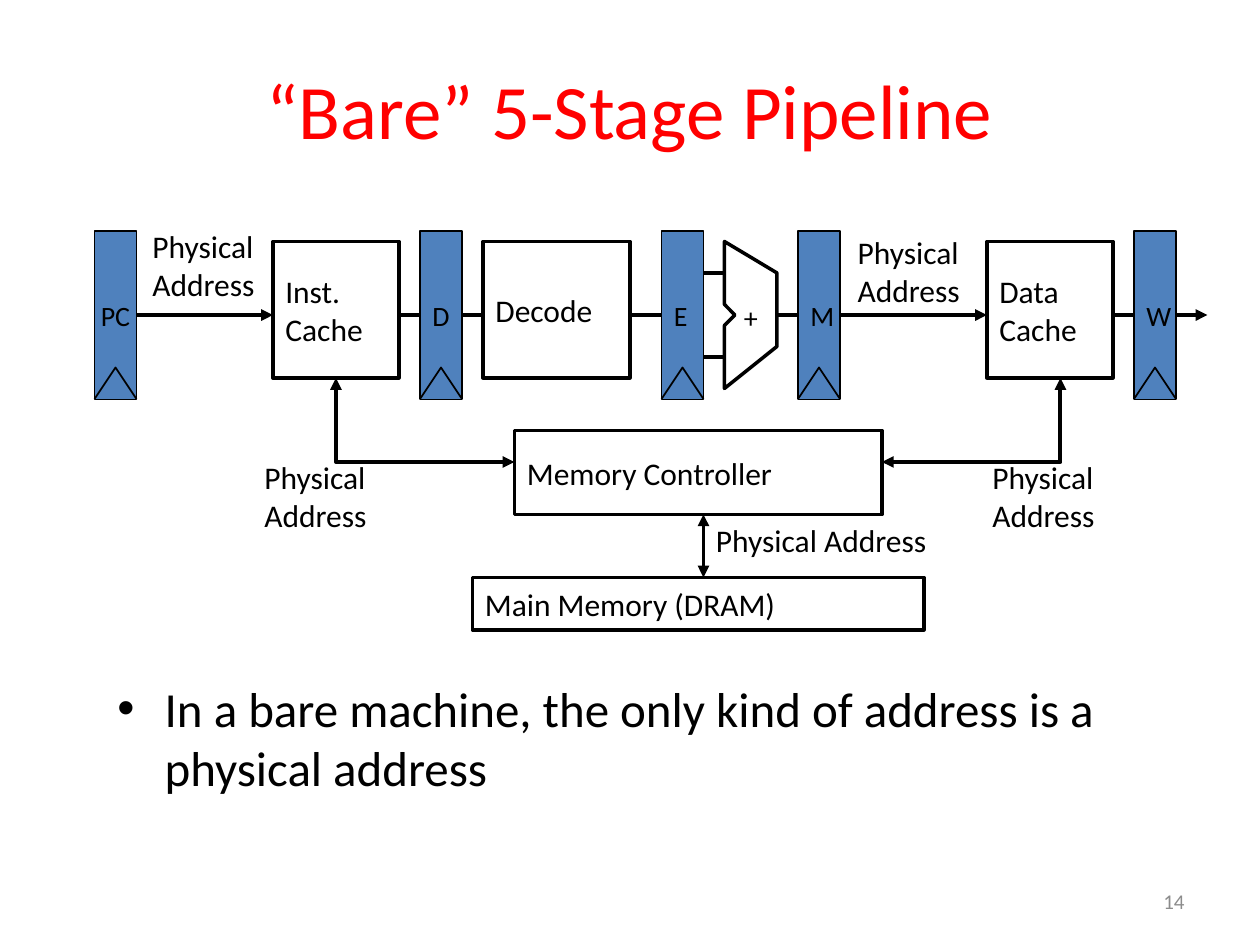
from pptx import Presentation
from pptx.dml.color import RGBColor
from pptx.enum.shapes import MSO_CONNECTOR, MSO_SHAPE
from pptx.enum.text import MSO_ANCHOR, PP_ALIGN
from pptx.oxml.ns import qn
from pptx.util import Pt
from lxml.etree import SubElement

COLORS = {"ink": "000000", "title": "FF0000", "register": "4F81BD",
          "paper": "FFFFFF", "number": "8C8C8C"}
FONT = "Calibri"

# Content, all lengths in points
TITLE = "“Bare” 5-Stage Pipeline"
BULLET = "In a bare machine, the only kind of address is a physical address"
SLIDE_NUMBER = "14"
WIRE_Y = 180
REGISTER_TOP, REGISTER_WIDTH, REGISTER_HEIGHT, CLOCK_HEIGHT = 132, 24, 96, 18
REGISTERS = {"PC": 54, "D": 240, "E": 378, "M": 456, "W": 648}  # name: left
BOXES = [  # text, left, top, width, height
    ("Inst. Cache", 156, 138, 72, 78),
    ("Decode", 276, 138, 84, 78),
    ("Data Cache", 564, 138, 72, 78),
    ("Main Memory (DRAM)", 270, 330, 258, 30),
    ("Memory Controller", 294, 246, 210, 48),
]
ADDER = [(414, 138), (414, 174), (420, 180), (414, 186), (414, 222),
         (444, 198), (444, 156)]
BACK_WIRES = [(444, 564, True), (636, 690, True), (228, 378, False)]  # from x, to x, arrow
ADDER_INPUTS = [156, 204]
CACHE_LINKS = [[(606, 216), (606, 264), (504, 264)],
               [(192, 216), (192, 264), (294, 264)]]
ADDRESS_LABELS = [  # left, top, width, height
    (80, 126, 88, 50.4), (483, 129.6, 88, 50.4), (560, 258, 88, 50.4),
    (144, 258, 88, 50.4), (402, 294, 192, 28.8),
]


def color(name):
    return RGBColor.from_string(COLORS[name])


def write(shape, text, size, ink="ink", align=PP_ALIGN.LEFT,
          anchor=MSO_ANCHOR.MIDDLE, wrap=True):
    frame = shape.text_frame
    frame.text = text
    frame.word_wrap = wrap
    frame.vertical_anchor = anchor
    paragraph = frame.paragraphs[0]
    paragraph.alignment = align
    paragraph.font.name = FONT
    paragraph.font.size = Pt(size)
    paragraph.font.color.rgb = color(ink)
    return paragraph


def add_label(slide, text, bounds, size, **options):
    box = slide.shapes.add_textbox(*map(Pt, bounds))
    return write(box, text, size, **options)


def paint(shape, fill, width):
    shape.shadow.inherit = False
    if fill:
        shape.fill.solid()
        shape.fill.fore_color.rgb = color(fill)
    else:
        shape.fill.background()
    shape.line.color.rgb = color("ink")
    shape.line.width = Pt(width)


def add_box(slide, bounds, fill, width):
    shape = slide.shapes.add_shape(MSO_SHAPE.RECTANGLE, *map(Pt, bounds))
    paint(shape, fill, width)
    return shape


def add_outline(slide, points, fill, width, close=False):
    builder = slide.shapes.build_freeform(*points[0], scale=Pt(1))
    builder.add_line_segments(points[1:], close=close)
    shape = builder.convert_to_shape()
    paint(shape, fill, width)
    return shape


def add_arrowheads(shape, *ends):
    for end in ends:
        SubElement(shape.line._get_or_add_ln(), qn(f"a:{end}"), type="triangle")


def add_wire(slide, start, end, *ends):
    wire = slide.shapes.add_connector(
        MSO_CONNECTOR.STRAIGHT, *map(Pt, (*start, *end)))
    wire.line.color.rgb = color("ink")
    wire.line.width = Pt(2.25)
    SubElement(wire._element.spPr, qn("a:effectLst"))
    add_arrowheads(wire, *ends)
    return wire


def add_register(slide, name, left):
    register = add_box(slide, (left, REGISTER_TOP, REGISTER_WIDTH, REGISTER_HEIGHT),
                       "register", 1)
    align = PP_ALIGN.CENTER if name == "PC" else PP_ALIGN.LEFT
    write(register, name, 16, align=align, wrap=False)
    bottom = REGISTER_TOP + REGISTER_HEIGHT
    clock = [(left, bottom), (left + REGISTER_WIDTH / 2, bottom - CLOCK_HEIGHT),
             (left + REGISTER_WIDTH, bottom)]
    add_outline(slide, clock, "register", 1)
    return register


def main():
    presentation = Presentation()
    presentation.slide_width, presentation.slide_height = Pt(720), Pt(540)
    slide = presentation.slides.add_slide(presentation.slide_layouts[5])

    # Title, bullet and slide number
    title = slide.shapes.title
    title.left, title.top, title.width, title.height = map(Pt, (36, 21.6, 648, 81))
    write(title, TITLE, 44, ink="title", align=PP_ALIGN.CENTER)
    bullet = add_label(slide, BULLET, (60, 384, 605, 80), 28, anchor=MSO_ANCHOR.TOP)
    bullet.space_before = Pt(5.6)
    properties = bullet._p.get_or_add_pPr()
    properties.set("marL", str(Pt(27)))
    properties.set("indent", str(Pt(-27)))
    bullet_font = SubElement(properties, qn("a:buFont"), typeface="Arial")
    bullet_font.addnext(SubElement(properties, qn("a:buChar"), char="•"))
    add_label(slide, SLIDE_NUMBER, (516, 500.4, 168, 28.8), 12, ink="number",
              align=PP_ALIGN.RIGHT)

    # Wires that run behind the stages
    back_wires = [add_wire(slide, (start, WIRE_Y), (end, WIRE_Y),
                           *(["tailEnd"] if arrow else []))
                  for start, end, arrow in BACK_WIRES]

    # Pipeline registers, stages and memory
    registers = {name: add_register(slide, name, left)
                 for name, left in REGISTERS.items()}
    back_wires[-1].end_connect(registers["E"], 1)
    for text, *bounds in BOXES:
        write(add_box(slide, bounds, "paper", 2), text, 18)

    # Adder with its two inputs
    add_outline(slide, ADDER, "paper", 2, close=True)
    for y in ADDER_INPUTS:
        add_wire(slide, (REGISTERS["E"] + REGISTER_WIDTH, y), (ADDER[0][0], y))
    add_label(slide, "+", (418, 168, 27.4, 26.6), 16, wrap=False)

    # Address paths
    fetch = add_wire(slide, (78, WIRE_Y), (156, WIRE_Y), "tailEnd")
    fetch.begin_connect(registers["PC"], 3)
    for points in CACHE_LINKS:
        link = add_outline(slide, points, None, 2.25)
        add_arrowheads(link, "headEnd", "tailEnd")
    add_wire(slide, (402, 294), (402, 330), "headEnd", "tailEnd")
    for bounds in ADDRESS_LABELS:
        add_label(slide, "Physical Address", bounds, 18)

    presentation.save("out.pptx")


if __name__ == "__main__":
    main()
